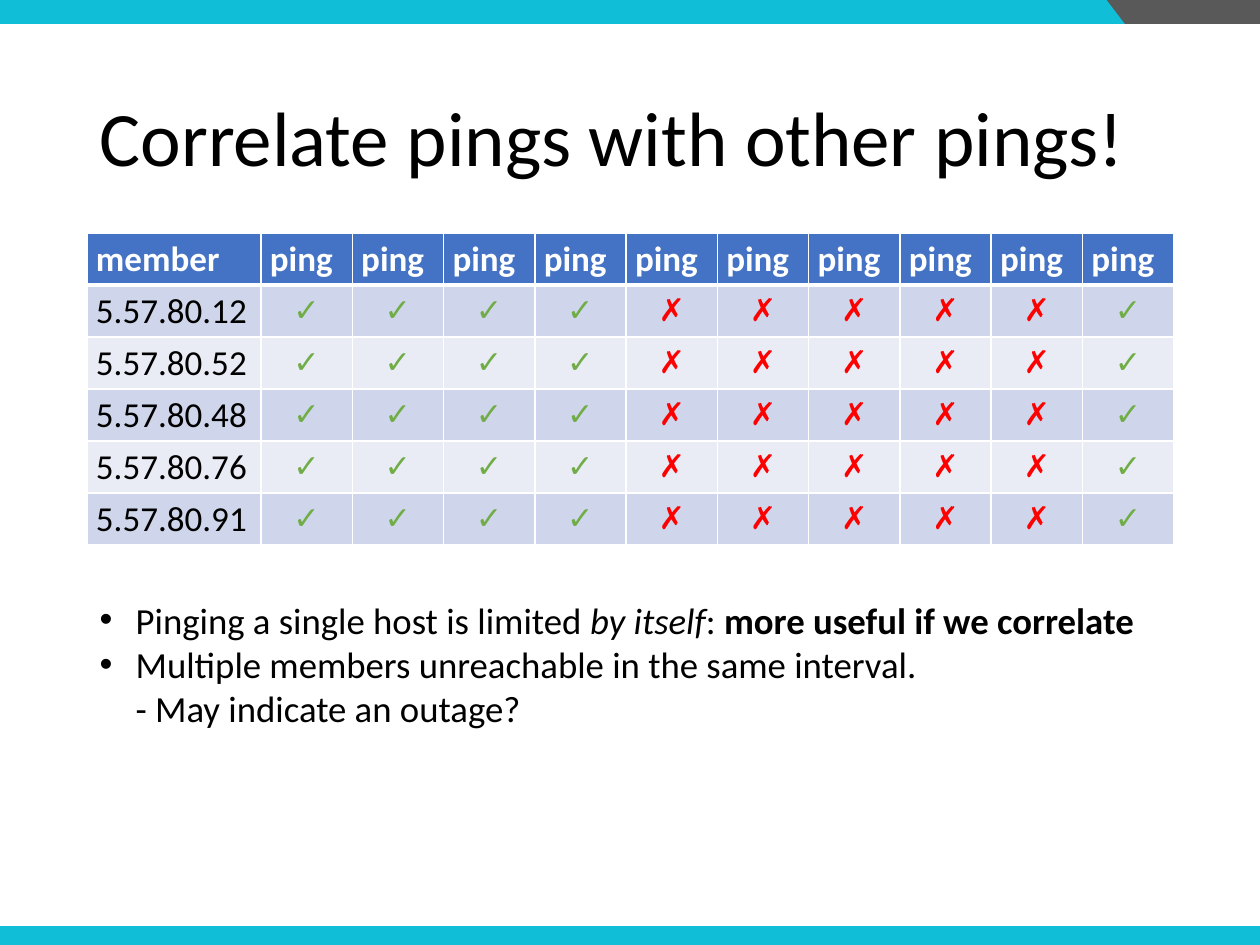
from lxml.etree import SubElement
from pptx import Presentation
from pptx.dml.color import RGBColor
from pptx.enum.shapes import MSO_SHAPE as Shape
from pptx.enum.text import MSO_ANCHOR as Anchor, MSO_AUTO_SIZE as AutoSize, PP_ALIGN as Align
from pptx.oxml.ns import qn
from pptx.util import Emu, Pt

EMU_PER_PX = 914400 / 126
FONT = "Calibri"
TEAL = RGBColor(0x10, 0xBE, 0xD7)
GRAY = RGBColor(0x59, 0x59, 0x59)
BLACK = RGBColor(0x00, 0x00, 0x00)
WHITE = RGBColor(0xFF, 0xFF, 0xFF)
BLUE = RGBColor(0x44, 0x72, 0xC4)
BAND_DARK = RGBColor(0xCF, 0xD5, 0xEA)
BAND_LIGHT = RGBColor(0xE9, 0xEB, 0xF5)
GREEN = RGBColor(0x70, 0xAD, 0x47)
RED = RGBColor(0xFF, 0x00, 0x00)

MEMBERS = ["5.57.80.12", "5.57.80.52", "5.57.80.48", "5.57.80.76", "5.57.80.91"]
PINGS = "✓✓✓✓✗✗✗✗✗✓"
MARK_COLORS = {"✓": GREEN, "✗": RED}
BULLETS = [
    [
        ("Pinging a single host is limited ", False, False),
        ("by itself", False, True),
        (": ", False, False),
        ("more useful if we correlate", True, False),
    ],
    [
        ("Multiple members unreachable in the same interval. ", False, False),
        None,
        ("- May indicate an outage?", False, False),
    ],
]


def px(length):
    return Emu(round(length * EMU_PER_PX))


def place(shape, left, top, width, height):
    shape.left, shape.top = px(left), px(top)
    shape.width, shape.height = px(width), px(height)


def add_run(paragraph, text, size, color, bold=False, italic=False):
    run = paragraph.add_run()
    run.text = text
    font = run.font
    font.name, font.size = FONT, Pt(size)
    font.bold, font.italic = bold, italic
    font.color.rgb = color


def add_band(slide, kind, box, color, rotation=0):
    band = slide.shapes.add_shape(kind, *map(px, box))
    band.rotation = rotation
    band.shadow.inherit = False
    band.fill.solid()
    band.fill.fore_color.rgb = color
    band.line.fill.background()


def fill_title(title, text):
    place(title, 87, 50, 1086, 183)
    frame = title.text_frame
    frame.auto_size = AutoSize.NONE
    frame.vertical_anchor = Anchor.MIDDLE
    paragraph = frame.paragraphs[0]
    paragraph.alignment = Align.LEFT
    paragraph.line_spacing = 0.9
    add_run(paragraph, text, 44, BLACK)


def add_bullet(paragraph, indent):
    properties = paragraph._p.get_or_add_pPr()
    properties.set("marL", str(indent))
    properties.set("indent", str(-indent))
    SubElement(properties, qn("a:buFont"), typeface="Arial")
    SubElement(properties, qn("a:buChar"), char="•")


def fill_body(body):
    place(body, 87, 591, 1070, 146)
    frame = body.text_frame
    frame.word_wrap = False
    frame.auto_size = AutoSize.SHAPE_TO_FIT_TEXT
    frame.vertical_anchor = Anchor.TOP
    for index, parts in enumerate(BULLETS):
        paragraph = frame.add_paragraph() if index else frame.paragraphs[0]
        paragraph.alignment = Align.LEFT
        paragraph.space_before = Pt(0)
        add_bullet(paragraph, px(36))
        for part in parts:
            if part is None:
                paragraph.add_line_break()
            else:
                text, bold, italic = part
                add_run(paragraph, text, 21, BLACK, bold, italic)


def set_borders(cell, top, bottom):
    properties = cell._tc.get_or_add_tcPr()
    widths = {"a:lnL": 1, "a:lnR": 1, "a:lnT": top, "a:lnB": bottom}
    for tag, width in widths.items():
        line = SubElement(properties, qn(tag), w=str(Pt(width)))
        fill = SubElement(line, qn("a:solidFill"))
        SubElement(fill, qn("a:srgbClr"), val=str(WHITE))


def fill_cell(cell, row, text):
    is_header = row == 0
    is_mark = text in MARK_COLORS
    cell.margin_left = cell.margin_right = px(9)
    cell.margin_top = cell.margin_bottom = px(5)
    cell.vertical_anchor = Anchor.MIDDLE if is_mark else Anchor.TOP
    set_borders(cell, top=3 if row == 1 else 1, bottom=3 if is_header else 1)
    cell.fill.solid()
    cell.fill.fore_color.rgb = BLUE if is_header else (BAND_LIGHT, BAND_DARK)[row % 2]
    paragraph = cell.text_frame.paragraphs[0]
    paragraph.alignment = Align.CENTER if is_mark else Align.LEFT
    color = MARK_COLORS.get(text, WHITE if is_header else BLACK)
    add_run(paragraph, text, 18 if is_mark else 20, color, bold=is_header)


def add_ping_table(slide):
    rows = [["member"] + ["ping"] * len(PINGS)]
    rows += [[member, *PINGS] for member in MEMBERS]
    width, member_width, row_height = 1087, 174, 52
    box = map(px, (87, 233, width, row_height * len(rows)))
    table = slide.shapes.add_table(len(rows), len(rows[0]), *box).table
    ping_width = (width - member_width) / len(PINGS)
    for index, column in enumerate(table.columns):
        column.width = px(ping_width if index else member_width)
    for row, texts in enumerate(rows):
        table.rows[row].height = px(row_height)
        for column, text in enumerate(texts):
            fill_cell(table.cell(row, column), row, text)


def main():
    presentation = Presentation()
    presentation.slide_width, presentation.slide_height = px(1260), px(945)
    slide = presentation.slides.add_slide(presentation.slide_layouts[1])
    add_band(slide, Shape.RECTANGLE, (0, 926, 1260, 19), TEAL)
    add_band(slide, Shape.RECTANGLE, (0, -1, 1260, 25), TEAL)
    add_band(slide, Shape.RECTANGLE, (1125, -1, 135, 25), GRAY)
    add_band(slide, Shape.ISOSCELES_TRIANGLE, (1106, -1, 38, 25), GRAY, rotation=180)
    fill_title(slide.shapes.title, "Correlate pings with other pings!")
    add_ping_table(slide)
    fill_body(slide.placeholders[1])
    presentation.save("out.pptx")


if __name__ == "__main__":
    main()
